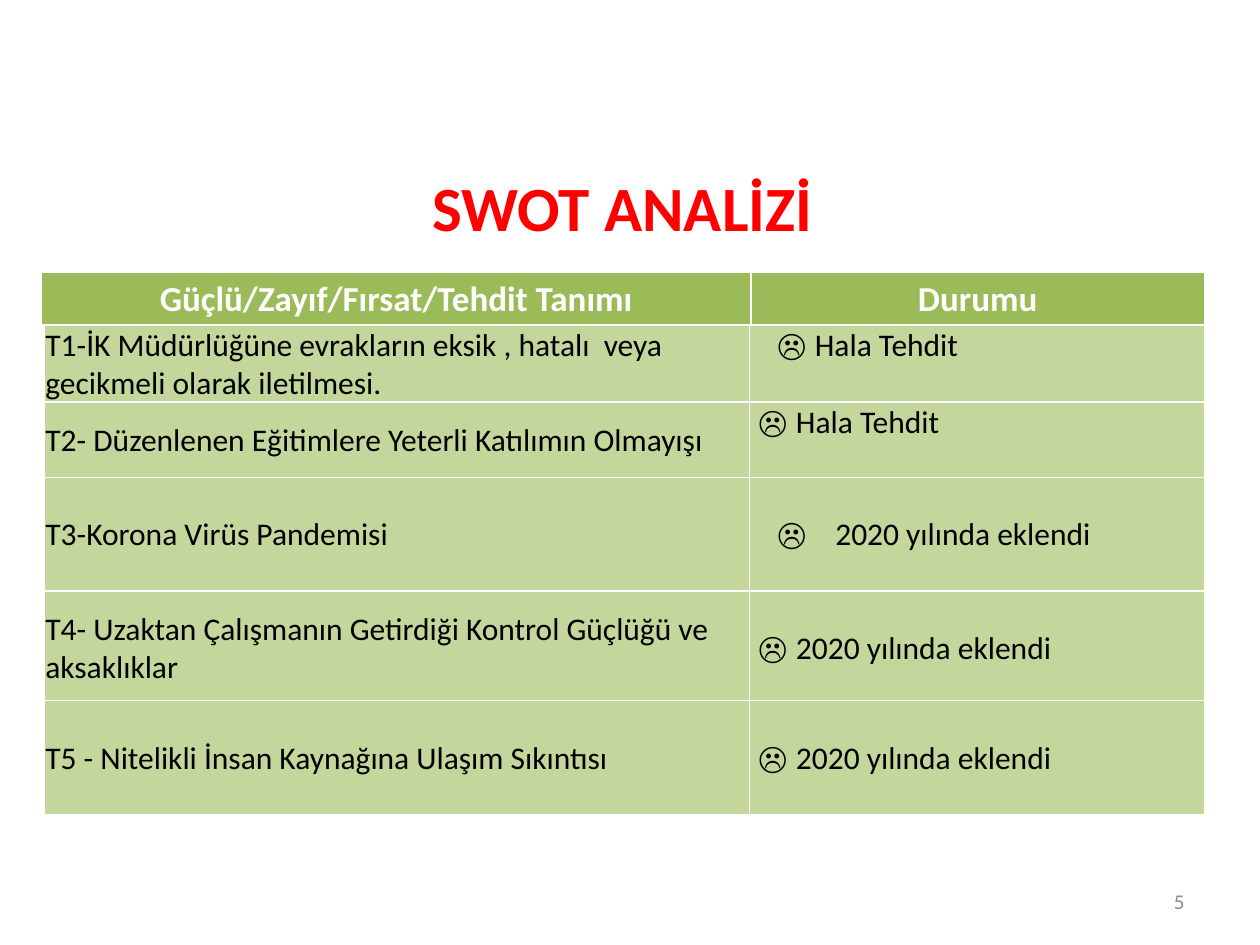
from lxml import etree
from pptx import Presentation, util as u
from pptx.dml.color import RGBColor
from pptx.enum import text
from pptx.oxml import ns

ANCHOR, ALIGN = text.MSO_ANCHOR, text.PP_ALIGN
COLUMNS, ROWS = 100, 75


def color(value):
    return RGBColor.from_string(value)


class Deck:
    """Slide on a 100 by 75 grid; every place is given in columns and rows."""
    font, white, black = "Calibri", "FFFFFF", "000000"
    header, body = "9BBB59", "C3D69B"

    def __init__(self):
        self.prs = Presentation()
        self.prs.slide_width, self.prs.slide_height = u.Inches(10), u.Inches(7.5)
        self.s = self.prs.slides.add_slide(self.prs.slide_layouts[6])

    def x(self, columns):
        return round(self.prs.slide_width * columns / COLUMNS)

    def y(self, rows):
        return round(self.prs.slide_height * rows / ROWS)

    def style(self, p, size, fill, align=ALIGN.LEFT, bold=False):
        p.alignment = align
        f = p.font
        f.name, f.size, f.bold = self.font, u.Pt(size), bold
        f.color.rgb = color(fill)

    def label(self, x, y, w, h, words, size, fill, align, anchor=ANCHOR.TOP, bold=False):
        sp = self.s.shapes.add_textbox(self.x(x), self.y(y), self.x(w), self.y(h))
        tf = sp.text_frame
        tf.word_wrap, tf.vertical_anchor = True, anchor
        tf.text = words
        self.style(tf.paragraphs[0], size, fill, align, bold)

    def table(self, x, y, widths, heights):
        t = self.s.shapes.add_table(len(heights), len(widths), self.x(x), self.y(y),
                                    self.x(sum(widths)), self.y(sum(heights))).table
        for column, w in zip(t.columns, widths):
            column.width = self.x(w)
        for row, h in zip(t.rows, heights):
            row.height = self.y(h)
        return t

    def borders(self, cell, bottom=1):
        tcPr = cell._tc.get_or_add_tcPr()
        for i, side in enumerate("LRTB"):
            width = bottom if side == "B" else 1
            ln = etree.Element(ns.qn(f"a:ln{side}"), w=str(u.Pt(width)))
            fill = etree.SubElement(ln, ns.qn("a:solidFill"))
            etree.SubElement(fill, ns.qn("a:srgbClr"), val=self.white)
            tcPr.insert(i, ln)

    def paint(self, cell, fill, bottom=1):
        cell.fill.solid()
        cell.fill.fore_color.rgb = color(fill)
        self.borders(cell, bottom)

    def header_table(self, x, y, widths, height, titles):
        t = self.table(x, y, widths, [height])
        for cell, title in zip(t.rows[0].cells, titles):
            self.paint(cell, self.header, bottom=3)
            cell.text = title
            self.style(cell.text_frame.paragraphs[0], 20, self.white, ALIGN.CENTER, True)

    def body_cell(self, cell, anchor, indent=0.1):
        self.paint(cell, self.body)
        cell.vertical_anchor = anchor
        cell.margin_left = self.x(indent)
        cell.margin_right = cell.margin_top = self.x(0.1)
        cell.margin_bottom = 0
        return cell.text_frame.paragraphs[0]

    def threat_table(self, x, y, widths, heights, threats):
        t = self.table(x, y, widths, heights)
        for row, (threat, gap, status, indent, anchor) in zip(t.rows, threats):
            p = self.body_cell(row.cells[0], ANCHOR.MIDDLE)
            p.text = threat
            self.style(p, 18, self.black)
            p = self.body_cell(row.cells[1], anchor, indent)
            if gap == "\t":
                self.tab_stop(p, 4.6)
            for words, font in (("☹" + gap, "Arial"), (status, self.font)):
                r = p.add_run()
                r.text, r.font.name = words, font
            self.style(p, 18, self.black)

    def tab_stop(self, p, columns):
        tabs = etree.SubElement(p._p.get_or_add_pPr(), ns.qn("a:tabLst"))
        etree.SubElement(tabs, ns.qn("a:tab"), pos=str(self.x(columns)), algn="l")


def main():
    still, added = "Hala Tehdit", "2020 yılında eklendi"
    near, far = 0.7, 2.2
    groups = [
        (25.8, [6, 6.1], [
            ("T1-İK Müdürlüğüne evrakların eksik , hatalı  veya gecikmeli olarak iletilmesi.",
             " ", still, far, ANCHOR.TOP),
            ("T2- Düzenlenen Eğitimlere Yeterli Katılımın Olmayışı",
             " ", still, near, ANCHOR.TOP)]),
        (37.9, [9, 9.1], [
            ("T3-Korona Virüs Pandemisi", "\t", added, far, ANCHOR.MIDDLE),
            ("T4- Uzaktan Çalışmanın Getirdiği Kontrol Güçlüğü ve aksaklıklar",
             " ", added, near, ANCHOR.MIDDLE)]),
        (55.6, [9.1], [
            ("T5 - Nitelikli İnsan Kaynağına Ulaşım Sıkıntısı",
             " ", added, near, ANCHOR.MIDDLE)]),
    ]
    deck = Deck()
    deck.label(11.2, 12.9, 76.4, 7.1, "SWOT ANALİZİ", 36, "FF0000", ALIGN.CENTER, bold=True)
    deck.label(71.7, 69.5, 23.3, 4, "5", 12, "8C8C8C", ALIGN.RIGHT, ANCHOR.MIDDLE)
    deck.header_table(3.3, 21.6, [56.3, 36], 4.1,
                      ["Güçlü/Zayıf/Fırsat/Tehdit Tanımı", "Durumu"])
    for top, heights, threats in groups:
        deck.threat_table(3.5, top, [56, 36.1], heights, threats)
    deck.prs.save("out.pptx")


if __name__ == "__main__":
    main()
